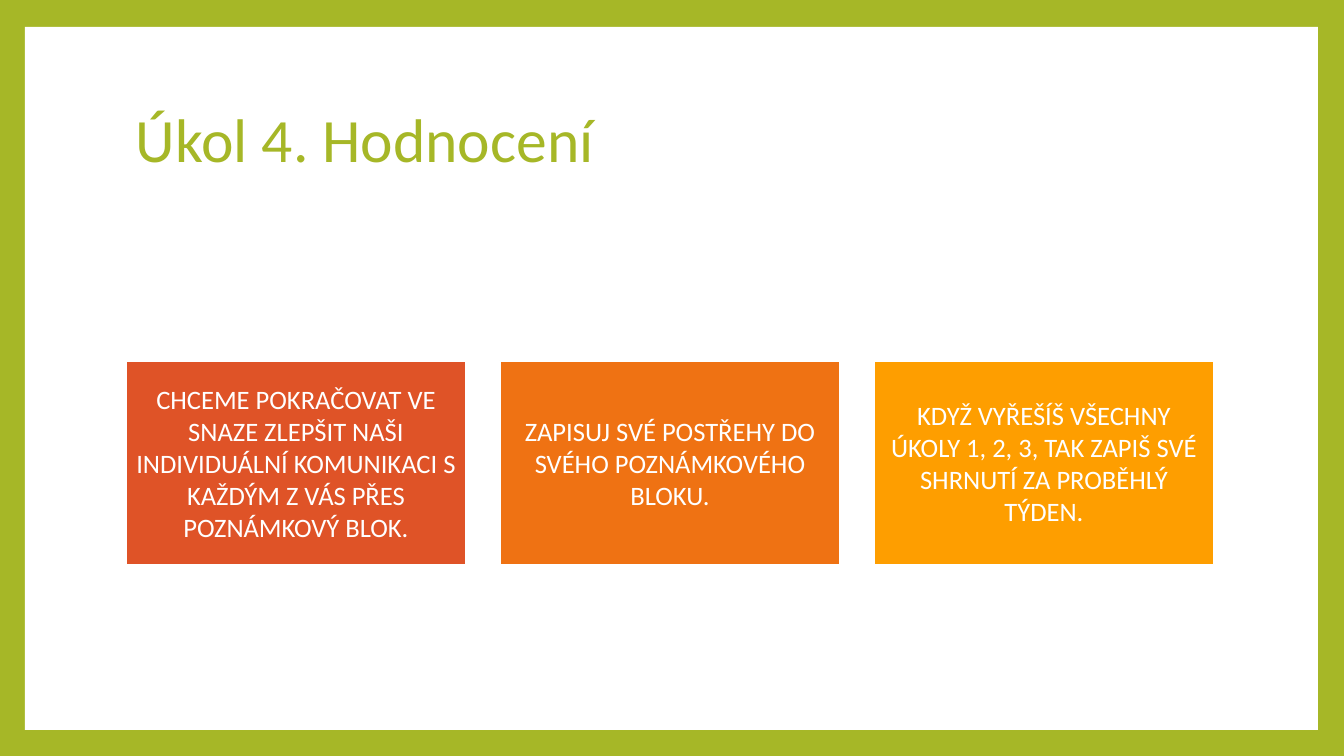
from pptx import Presentation
from pptx.dml.color import RGBColor
from pptx.enum.shapes import MSO_SHAPE
from pptx.enum.text import MSO_ANCHOR, PP_ALIGN
from pptx.util import Emu, Pt

GREEN = RGBColor(0xA6, 0xB7, 0x27)
RED = RGBColor(0xDF, 0x53, 0x27)
ORANGE = RGBColor(0xEF, 0x72, 0x13)
AMBER = RGBColor(0xFE, 0x9E, 0x00)
WHITE = RGBColor(0xFF, 0xFF, 0xFF)

SLIDE_W, SLIDE_H = 1344, 756
CARD_LEFT, CARD_TOP, CARD_W, CARD_H, CARD_PITCH = 126, 361, 340, 204, 374

CARDS = [
    (RED, "CHCEME POKRAČOVAT VE SNAZE ZLEPŠIT NAŠI INDIVIDUÁLNÍ KOMUNIKACI S "
          "KAŽDÝM Z VÁS PŘES POZNÁMKOVÝ BLOK."),
    (ORANGE, "ZAPISUJ SVÉ POSTŘEHY DO SVÉHO POZNÁMKOVÉHO BLOKU."),
    (AMBER, "KDYŽ VYŘEŠÍŠ VŠECHNY ÚKOLY 1, 2, 3, TAK ZAPIŠ SVÉ SHRNUTÍ ZA "
            "PROBĚHLÝ TÝDEN."),
]


def px(n):
    return Emu(round(n * 914400 / 100.8))


class Deck:
    font = "Calibri"

    def __init__(self):
        self.prs = Presentation()
        self.prs.slide_width, self.prs.slide_height = px(SLIDE_W), px(SLIDE_H)
        self.s = self.prs.slides.add_slide(self.prs.slide_layouts[6])

    def background(self, color):
        fill = self.s.background.fill
        fill.solid()
        fill.fore_color.rgb = color

    def rect(self, x, y, w, h, color):
        sp = self.s.shapes.add_shape(MSO_SHAPE.RECTANGLE, px(x), px(y), px(w), px(h))
        sp.shadow.inherit = False
        sp.fill.solid()
        sp.fill.fore_color.rgb = color
        sp.line.fill.background()
        return sp

    def set_text(self, sp, text, size, color, align):
        tf = sp.text_frame
        tf.word_wrap = True
        tf.vertical_anchor = MSO_ANCHOR.MIDDLE
        p = tf.paragraphs[0]
        p.text = text
        p.alignment = align
        p.font.name = self.font
        p.font.size = Pt(size)
        p.font.color.rgb = color
        return p

    def title(self, x, y, w, h, text):
        sp = self.s.shapes.add_textbox(px(x), px(y), px(w), px(h))
        p = self.set_text(sp, text, 44, GREEN, PP_ALIGN.LEFT)
        p.line_spacing = 0.9

    def card(self, x, y, w, h, color, text):
        sp = self.rect(x, y, w, h, color)
        sp.line.color.rgb = WHITE
        sp.line.width = Pt(1.5)
        tf = sp.text_frame
        tf.margin_left = tf.margin_right = tf.margin_top = tf.margin_bottom = px(8)
        self.set_text(sp, text, 19, WHITE, PP_ALIGN.CENTER)


def main():
    deck = Deck()
    deck.background(GREEN)
    deck.rect(25, 27, 1293, 703, WHITE)
    deck.title(126, 68, 1089, 149, "Úkol 4. Hodnocení")
    for i, (color, text) in enumerate(CARDS):
        deck.card(CARD_LEFT + i * CARD_PITCH, CARD_TOP, CARD_W, CARD_H, color, text)
    deck.prs.save("out.pptx")


if __name__ == "__main__":
    main()
